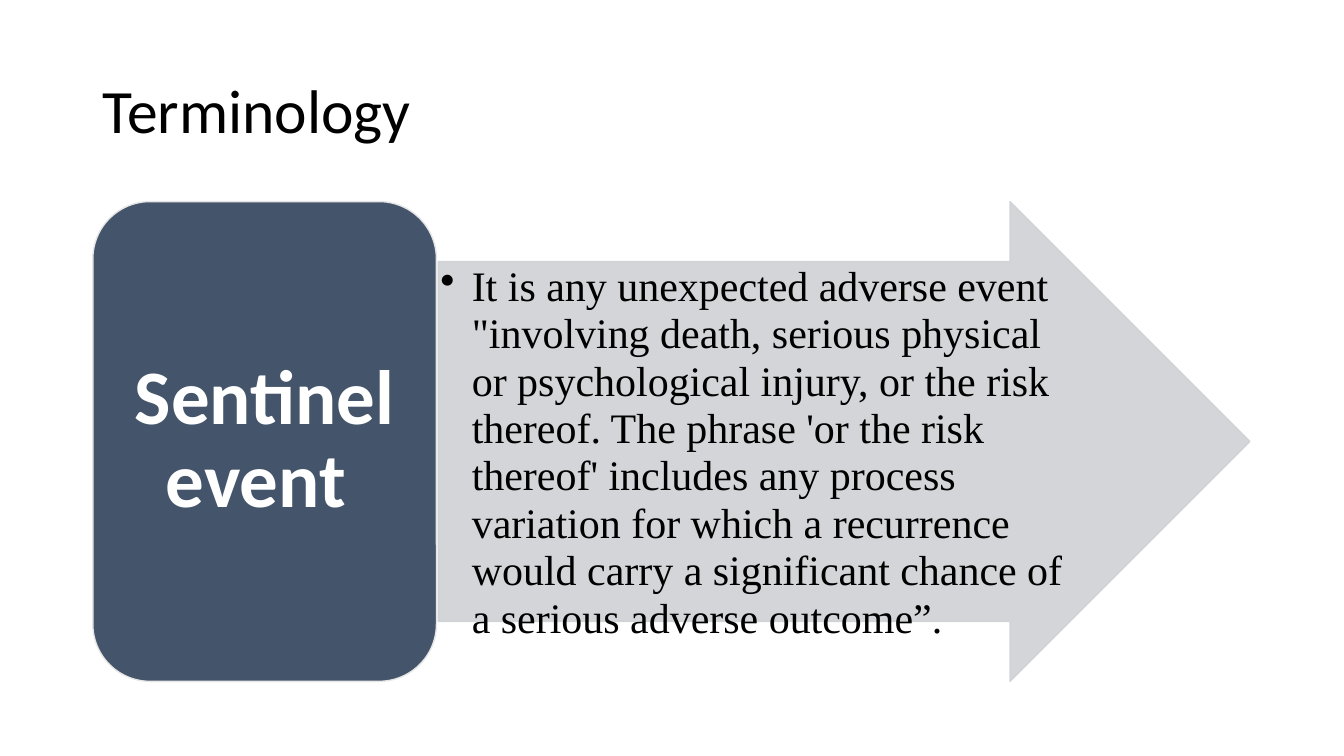
from lxml import etree
from pptx import Presentation
from pptx.dml.color import RGBColor
from pptx.enum.shapes import MSO_SHAPE
from pptx.enum.text import MSO_ANCHOR, PP_ALIGN
from pptx.oxml.ns import qn
from pptx.util import Cm, Pt

TITLE = "Terminology"
TERM = "Sentinel event "
DEFINITION = (
    "It is any unexpected adverse event \"involving death, serious physical or "
    "psychological injury, or the risk thereof. The phrase 'or the risk thereof' "
    "includes any process variation for which a recurrence would carry a "
    "significant chance of a serious adverse outcome”."
)

THEME = {
    "text": "000000", "light": "FFFFFF", "term": "44546A",
    "term_line": "E7E6E6", "arrow": "CFD1D4", "arrow_alpha": 90,
    "sans": "Calibri", "serif": "Times New Roman",
    "title_size": 44, "term_size": 55, "body_size": 30,
}
ARROW, ROUNDED = MSO_SHAPE.RIGHT_ARROW, MSO_SHAPE.ROUNDED_RECTANGLE
TOP, MIDDLE = MSO_ANCHOR.TOP, MSO_ANCHOR.MIDDLE
LEFT, CENTER = PP_ALIGN.LEFT, PP_ALIGN.CENTER

# Layout in centimetres
MARGIN, ROW_TOP, ROW_HEIGHT = 2.34, 5.08, 12.09
TERM_WIDTH = 8.66
ARROW_LEFT, ARROW_WIDTH = 11.05, 20.45
SHAFT = 0.75
BODY_WIDTH, BODY_INDENT = 15.93, 0.79


def box(left, top, width, height):
    return [Cm(v) for v in (left, top, width, height)]


def add_block(slide, kind, area, adjustments, fill, line):
    sp = slide.shapes.add_shape(kind, *area)
    sp.shadow.inherit = False
    for i, value in enumerate(adjustments):
        sp.adjustments[i] = value
    sp.fill.solid()
    sp.fill.fore_color.rgb = RGBColor.from_string(fill)
    sp.line.color.rgb = RGBColor.from_string(line)
    sp.line.width = Pt(1)
    return sp


def write(sp, text, font, size, color, anchor, align, insets, spacing=0.9,
          bold=False, bullet_indent=None):
    tf = sp.text_frame
    tf.word_wrap = True
    tf.vertical_anchor = anchor
    tf.margin_left = tf.margin_right = Cm(insets[0])
    tf.margin_top = tf.margin_bottom = Cm(insets[1])
    p = tf.paragraphs[0]
    p.text = text
    p.alignment = align
    p.line_spacing = spacing
    if bullet_indent:
        pPr = p._p.get_or_add_pPr()
        pPr.set("marL", str(Cm(bullet_indent)))
        pPr.set("indent", str(-Cm(bullet_indent)))
        etree.SubElement(pPr, qn("a:buChar")).set("char", "•")
    f = p.runs[0].font
    f.name, f.size, f.bold = font, Pt(size), bold
    f.color.rgb = RGBColor.from_string(color)


def set_alpha(sp, percent):
    """Make the fill and the outline of a shape partly transparent."""
    for color in sp._element.spPr.iter(qn("a:srgbClr")):
        etree.SubElement(color, qn("a:alpha")).set("val", str(percent * 1000))


def main():
    prs = Presentation()
    prs.slide_width, prs.slide_height = Cm(33.87), Cm(19.05)
    slide = prs.slides.add_slide(prs.slide_layouts[6])
    t = THEME

    title = slide.shapes.add_textbox(*box(MARGIN, 1.01, 29.21, 3.68))
    write(title, TITLE, t["sans"], t["title_size"], t["text"], MIDDLE, LEFT,
          (0.25, 0.13))

    arrow = add_block(slide, ARROW, box(ARROW_LEFT, ROW_TOP, ARROW_WIDTH, ROW_HEIGHT),
                      (SHAFT, 0.5), t["arrow"], t["arrow"])
    set_alpha(arrow, t["arrow_alpha"])

    body_top = ROW_TOP + ROW_HEIGHT * (1 - SHAFT) / 2
    body = slide.shapes.add_textbox(
        *box(ARROW_LEFT, body_top, BODY_WIDTH, ROW_HEIGHT * SHAFT))
    write(body, DEFINITION, t["serif"], t["body_size"], t["text"], TOP, LEFT,
          (0.05, 0.05), spacing=0.94, bullet_indent=BODY_INDENT)

    term = add_block(slide, ROUNDED, box(MARGIN, ROW_TOP, TERM_WIDTH, ROW_HEIGHT),
                     (), t["term"], t["term_line"])
    write(term, TERM, t["sans"], t["term_size"], t["light"], MIDDLE, CENTER,
          (0.58, 0.29), bold=True)

    prs.save("out.pptx")


if __name__ == "__main__":
    main()
